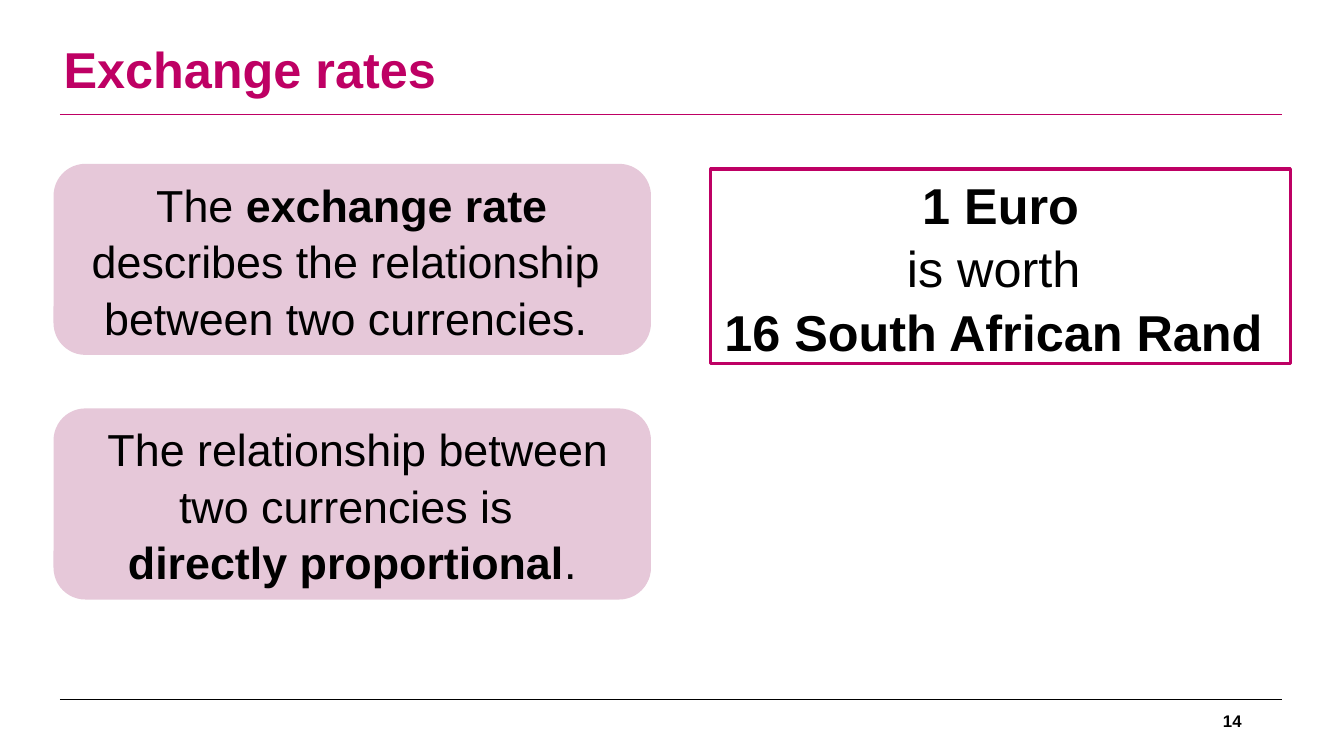
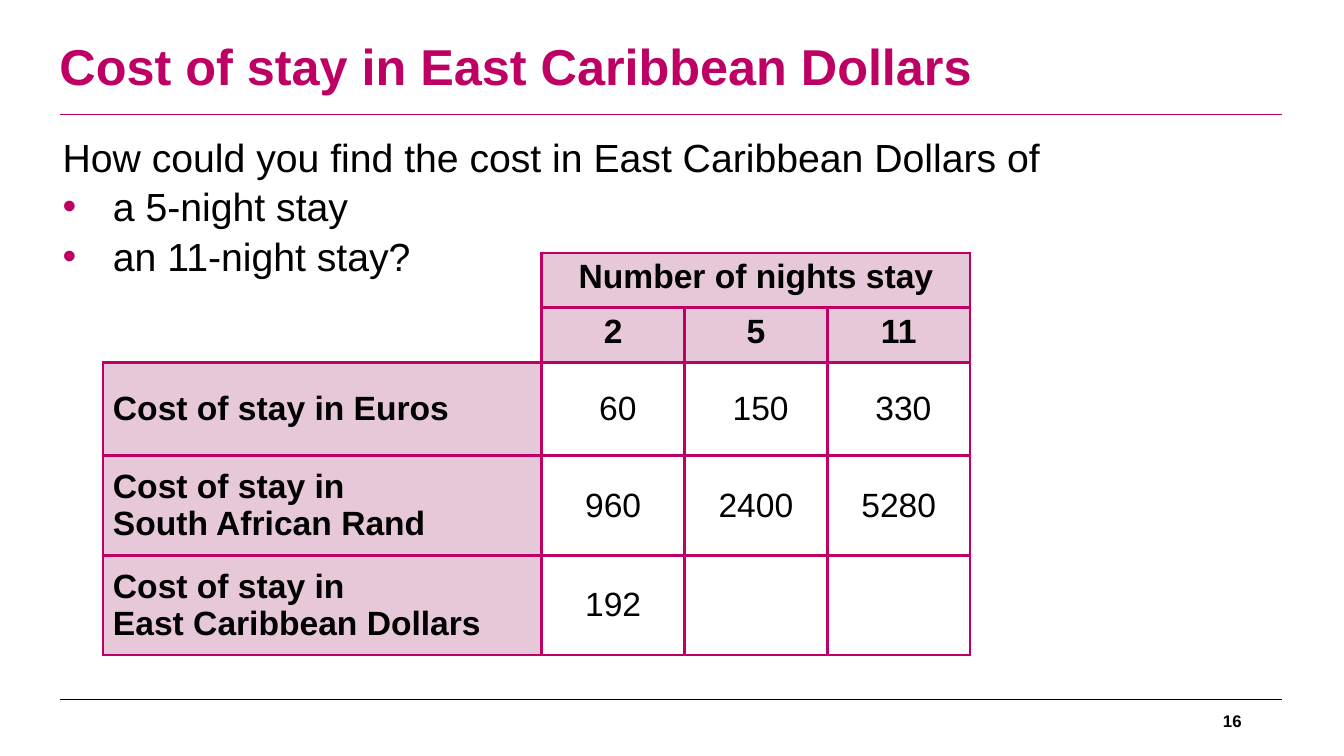
import pptx
import pptx.util
import pptx.dml.color
import pptx.enum.shapes
import pptx.enum.text
import pptx.oxml.ns
import lxml.etree

MAGENTA = pptx.dml.color.RGBColor(0xBE, 0x00, 0x64)
PINK = pptx.dml.color.RGBColor(0xE6, 0xC8, 0xD9)
BLACK = pptx.dml.color.RGBColor(0x00, 0x00, 0x00)
FONT = "Arial"
BODY_SPACING = 1.05
TITLE_ONLY, TITLE_AND_BODY = 5, 1
ALIGN = pptx.enum.text.PP_ALIGN
ANCHOR = pptx.enum.text.MSO_ANCHOR
SHAPE = pptx.enum.shapes.MSO_SHAPE


def px(n):
    return pptx.util.Emu(n * 9525)


def sub(parent, tag, **attrs):
    return lxml.etree.SubElement(parent, pptx.oxml.ns.qn(tag), attrs)


def place(sp, x, y, w, h):
    sp.left, sp.top, sp.width, sp.height = px(x), px(y), px(w), px(h)


def format_paragraph(p, size, color=BLACK, bold=False, align=ALIGN.LEFT, spacing=1.0):
    p.alignment = align
    p.line_spacing = spacing
    p.space_before = pptx.util.Pt(0)
    p.font.name = FONT
    p.font.size = pptx.util.Pt(size)
    p.font.bold = bold
    p.font.color.rgb = color


def add_marked_text(p, text):
    for i, part in enumerate(text.split("**")):
        for j, line in enumerate(part.split("\n")):
            if j:
                p.add_line_break()
            if line:
                r = p.add_run()
                r.text = line
                r.font.bold = i % 2 == 1


def add_rule(s, y, color):
    ln = s.shapes.add_connector(
        pptx.enum.shapes.MSO_CONNECTOR.STRAIGHT, px(57), px(y), px(1221), px(y))
    ln.line.color.rgb = color
    ln.line.width = pptx.util.Pt(0.75)
    sub(ln._element.spPr, "a:effectLst")


def add_page_number(s, number):
    tf = s.shapes.add_textbox(px(904), px(667), px(288), px(38)).text_frame
    tf.word_wrap = True
    tf.vertical_anchor = ANCHOR.MIDDLE
    p = tf.paragraphs[0]
    p.text = str(number)
    format_paragraph(p, 12, bold=True, align=ALIGN.RIGHT)


def add_slide(prs, layout, title, box, anchor, number):
    s = prs.slides.add_slide(prs.slide_layouts[layout])
    add_rule(s, 666, BLACK)
    add_rule(s, 109, MAGENTA)
    sp = s.shapes.title
    place(sp, *box)
    tf = sp.text_frame
    tf.text = title
    tf.auto_size = pptx.enum.text.MSO_AUTO_SIZE.NONE
    tf.vertical_anchor = anchor
    format_paragraph(tf.paragraphs[0], 36, MAGENTA, bold=True, spacing=0.9)
    add_page_number(s, number)
    return s


def add_box(s, shape, box, paragraphs, size, fill=None, outline=None):
    sp = s.shapes.add_shape(shape, *map(px, box))
    sp.shadow.inherit = False
    if fill is None:
        sp.fill.background()
    else:
        sp.fill.solid()
        sp.fill.fore_color.rgb = fill
    if outline is None:
        sp.line.fill.background()
    else:
        sp.line.color.rgb = outline
        sp.line.width = pptx.util.Pt(2.25)
    tf = sp.text_frame
    tf.word_wrap = True
    tf.vertical_anchor = ANCHOR.MIDDLE
    for i, text in enumerate(paragraphs):
        p = tf.add_paragraph() if i else tf.paragraphs[0]
        add_marked_text(p, text)
        format_paragraph(p, size, align=ALIGN.CENTER, spacing=BODY_SPACING)


def set_bullet(p, bulleted):
    pPr = p._p.get_or_add_pPr()
    indent = px(48) if bulleted else 0
    pPr.set("marL", str(indent))
    pPr.set("indent", str(-indent))
    if bulleted:
        sub(sub(pPr, "a:buClr"), "a:srgbClr", val=str(MAGENTA))
        sub(pPr, "a:buFont", typeface=FONT)
        sub(pPr, "a:buChar", char="•")
    else:
        sub(pPr, "a:buNone")


def fill_body(s, box, lead, bullets):
    sp = s.placeholders[1]
    place(sp, *box)
    tf = sp.text_frame
    tf.text = "\n".join([lead, *bullets])
    tf.auto_size = pptx.enum.text.MSO_AUTO_SIZE.NONE
    for i, p in enumerate(tf.paragraphs):
        set_bullet(p, i > 0)
        format_paragraph(p, 28, spacing=BODY_SPACING)


def set_borders(cell, visible):
    tcPr = cell._tc.get_or_add_tcPr()
    for side in "LRTB":
        ln = sub(tcPr, "a:ln" + side, w=str(pptx.util.Pt(2.25)))
        if side in visible:
            sub(sub(ln, "a:solidFill"), "a:srgbClr", val=str(MAGENTA))
        else:
            sub(ln, "a:noFill")


def format_cell(cell, row, col, text):
    corner = row < 2 and col == 0
    heading = (row < 2 or col == 0) and not corner
    if corner:
        set_borders(cell, "RB" if row == 1 else "R")
    else:
        set_borders(cell, "LRTB")
    if heading:
        cell.fill.solid()
        cell.fill.fore_color.rgb = PINK
    else:
        cell.fill.background()
    cell.vertical_anchor = ANCHOR.TOP if row < 2 else ANCHOR.MIDDLE
    p = cell.text_frame.paragraphs[0]
    p.text = text.replace("\n", "\v")
    format_paragraph(p, 24, bold=heading, align=ALIGN.CENTER if col else ALIGN.LEFT)


def add_cost_table(s, x, y, widths, heights, rows):
    table = s.shapes.add_table(
        len(heights), len(widths), px(x), px(y), px(sum(widths)), px(sum(heights))).table
    table.first_row = False
    table.horz_banding = False
    for column, width in zip(table.columns, widths):
        column.width = px(width)
    for table_row, height in zip(table.rows, heights):
        table_row.height = px(height)
    for r, texts in enumerate(rows):
        for c, text in enumerate(texts):
            format_cell(table.cell(r, c), r, c, text)
    table.cell(0, 1).merge(table.cell(0, len(widths) - 1))


def build_exchange_rates(prs):
    s = add_slide(prs, TITLE_ONLY, "Exchange rates", (51, 38, 1104, 139), ANCHOR.TOP, 14)
    statements = [
        " The **exchange rate \n**describes the relationship \nbetween two currencies. ",
        " The relationship between two currencies is \n**directly proportional**.",
    ]
    for i, text in enumerate(statements):
        add_box(s, SHAPE.ROUNDED_RECTANGLE, (51, 156 + 233 * i, 569, 182), [text], 32, fill=PINK)
    add_box(s, SHAPE.RECTANGLE, (677, 161, 552, 185),
            ["**1 Euro**", "is worth ", "**16 South African Rand** "], 36, outline=MAGENTA)


def build_cost_of_stay(prs):
    s = add_slide(prs, TITLE_AND_BODY, "Cost of stay in East Caribbean Dollars",
                  (47, 12, 960, 107), ANCHOR.MIDDLE, 16)
    fill_body(s, (50, 120, 1171, 190),
              "How could you find the cost in East Caribbean Dollars of",
              ["a 5-night stay", "an 11-night stay?"])
    add_cost_table(s, 98, 241, [418] + [136] * 3, [52, 52, 89, 95, 95], [
        ["", "Number of nights stay", "", ""],
        ["", "2", "5", "11"],
        ["Cost of stay in Euros", " 60", " 150", " 330"],
        ["Cost of stay in \nSouth African Rand", "960", "2400", "5280"],
        ["Cost of stay in \nEast Caribbean Dollars", "192", "", ""],
    ])


def main():
    prs = pptx.Presentation()
    prs.slide_width, prs.slide_height = px(1280), px(720)
    build_exchange_rates(prs)
    build_cost_of_stay(prs)
    prs.save("out.pptx")


if __name__ == "__main__":
    main()
